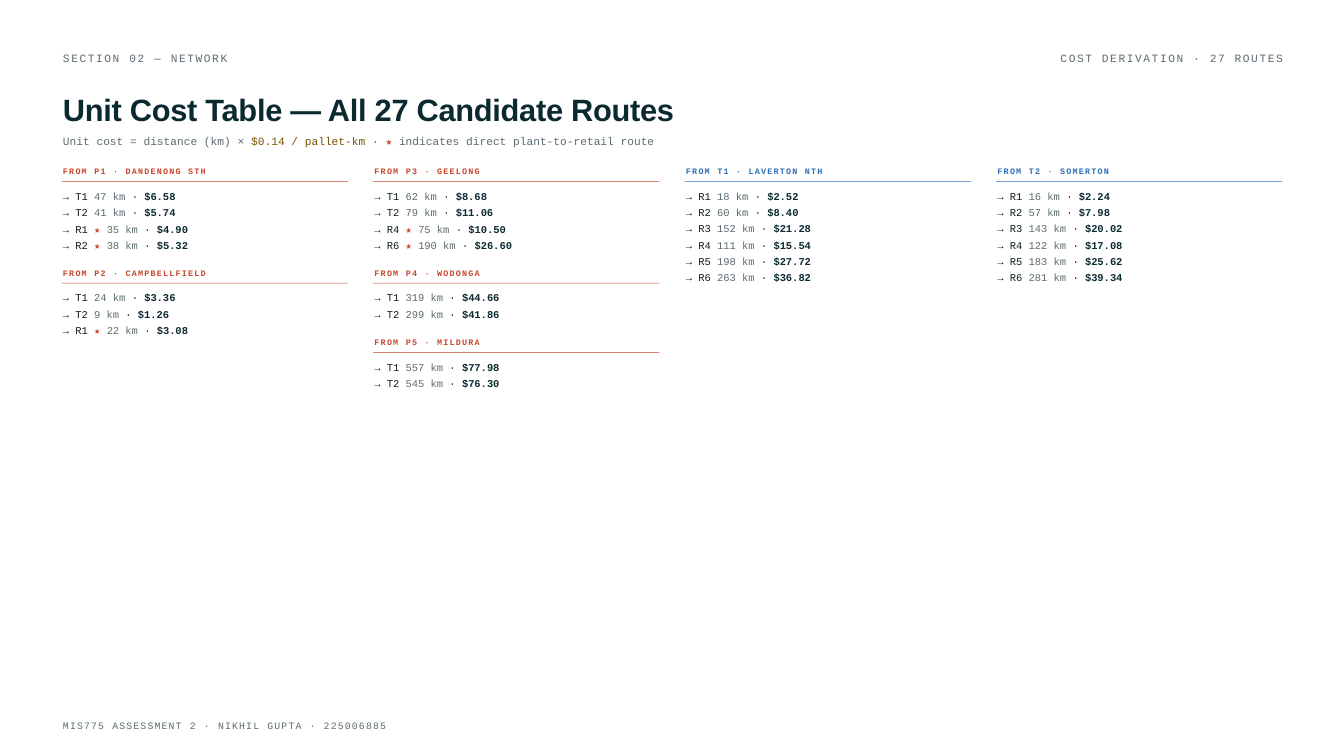
from dataclasses import dataclass

from pptx import Presentation
from pptx.dml.color import RGBColor
from pptx.enum.shapes import MSO_SHAPE
from pptx.util import Emu, Pt

EMU_PER_PX = 9525
PX_PER_PT = 96 / 72
RATE = 0.14


@dataclass(frozen=True)
class Theme:
    ink: str = "0E1B1F"
    deep: str = "0B2A30"
    muted: str = "5B6B6F"
    amber: str = "7A5200"
    plant: str = "C8462C"
    transit: str = "2F6FB5"
    sans: str = "Arial"
    mono: str = "Courier New"
    title: float = 33
    label: float = 12
    heading: float = 9
    route: float = 11.2
    footer: float = 10.5
    route_line: float = 17.45


THEME = Theme()

COLUMNS = [
    [
        ("P1", "DANDENONG STH", [("T1", 47), ("T2", 41), ("R1", 35), ("R2", 38)]),
        ("P2", "CAMPBELLFIELD", [("T1", 24), ("T2", 9), ("R1", 22)]),
    ],
    [
        ("P3", "GEELONG", [("T1", 62), ("T2", 79), ("R4", 75), ("R6", 190)]),
        ("P4", "WODONGA", [("T1", 319), ("T2", 299)]),
        ("P5", "MILDURA", [("T1", 557), ("T2", 545)]),
    ],
    [
        ("T1", "LAVERTON NTH",
         [("R1", 18), ("R2", 60), ("R3", 152), ("R4", 111), ("R5", 198), ("R6", 263)]),
    ],
    [
        ("T2", "SOMERTON",
         [("R1", 16), ("R2", 57), ("R3", 143), ("R4", 122), ("R5", 183), ("R6", 281)]),
    ],
]


def px(value):
    return Emu(round(value * EMU_PER_PX))


def add_text(page, left, top, width, height, lines, size, spacing,
             font=THEME.mono, tracking=0):
    box = page.shapes.add_textbox(px(left), px(top), px(width), px(height))
    frame = box.text_frame
    frame.word_wrap = True
    frame.margin_left = frame.margin_right = 0
    frame.margin_top = frame.margin_bottom = 0
    for index, line in enumerate(lines):
        para = frame.add_paragraph() if index else frame.paragraphs[0]
        para.line_spacing = Pt(spacing)
        for text, color, bold in line:
            span = para.add_run()
            span.text = text
            span.font.name = font
            span.font.size = Pt(size)
            span.font.bold = bold
            span.font.color.rgb = RGBColor.from_string(color)
            if tracking:
                span._r.get_or_add_rPr().set("spc", str(round(tracking * 100)))


def add_header(page, left, top, width):
    right_width = 324
    labels = [
        (left, 257, "SECTION 02 — NETWORK"),
        (left + width - right_width, right_width, "COST DERIVATION · 27 ROUTES"),
    ]
    for label_left, label_width, text in labels:
        add_text(page, label_left, top, label_width, 29,
                 [[(text, THEME.muted, False)]], THEME.label, 20.2, tracking=1.7)
    add_text(page, left, top + 59, width, 52,
             [[("Unit Cost Table — All 27 Candidate Routes", THEME.deep, True)]],
             THEME.title, 42.8, font=THEME.sans, tracking=-0.3)
    formula = [
        ("Unit cost = distance (km) × ", THEME.muted, False),
        (f"${RATE:.2f} / pallet-km ", THEME.amber, False),
        ("· ", THEME.muted, False),
        ("★ ", THEME.plant, True),
        ("indicates direct plant-to-retail route", THEME.muted, False),
    ]
    add_text(page, left, top + 118, width, 29, [formula], THEME.label, 20.2)


def route_line(origin, destination, distance):
    direct = origin.startswith("P") and destination.startswith("R")
    star = [("★ ", THEME.plant, False)] if direct else []
    return [
        (f"→ {destination} ", THEME.ink, False),
        *star,
        (f"{distance} km ", THEME.muted, False),
        ("· ", THEME.ink, False),
        (f"${distance * RATE:.2f}", THEME.deep, True),
    ]


def add_origin(page, left, top, width, origin, place, routes):
    color = THEME.plant if origin.startswith("P") else THEME.transit
    rows_height = round(len(routes) * THEME.route_line * PX_PER_PT)
    rule = page.shapes.add_shape(MSO_SHAPE.RECTANGLE, px(left), px(top + 29),
                                 px(width), px(1))
    rule.shadow.inherit = False
    rule.fill.solid()
    rule.fill.fore_color.rgb = RGBColor.from_string(color)
    rule.line.fill.background()
    add_text(page, left + 2, top, width, 24,
             [[(f"FROM {origin} · {place}", color, True)]],
             THEME.heading, 16.7, tracking=1.3)
    lines = [route_line(origin, *route) for route in routes]
    add_text(page, left + 2, top + 36, width, rows_height, lines,
             THEME.route, THEME.route_line)
    return rows_height + 52


def add_cost_columns(page, left, top, width, gap):
    column_width = (width - gap * (len(COLUMNS) - 1)) // len(COLUMNS)
    for index, origins in enumerate(COLUMNS):
        column_left = left + index * (column_width + gap)
        cursor = top
        for origin in origins:
            cursor += add_origin(page, column_left, cursor, column_width, *origin)


def add_footer(page, left, top, width):
    add_text(page, left, top, width, 24,
             [[("MIS775 ASSESSMENT 2 · NIKHIL GUPTA · 225006885", THEME.muted, False)]],
             THEME.footer, 17.6, tracking=1.3)


def main():
    deck = Presentation()
    deck.slide_width = px(1920)
    deck.slide_height = px(1080)
    page = deck.slides.add_slide(deck.slide_layouts[6])
    add_header(page, 90, 66, 1749)
    add_cost_columns(page, 88, 230, 1744, 36)
    add_footer(page, 90, 1021, 472)
    deck.save("out.pptx")


if __name__ == "__main__":
    main()
